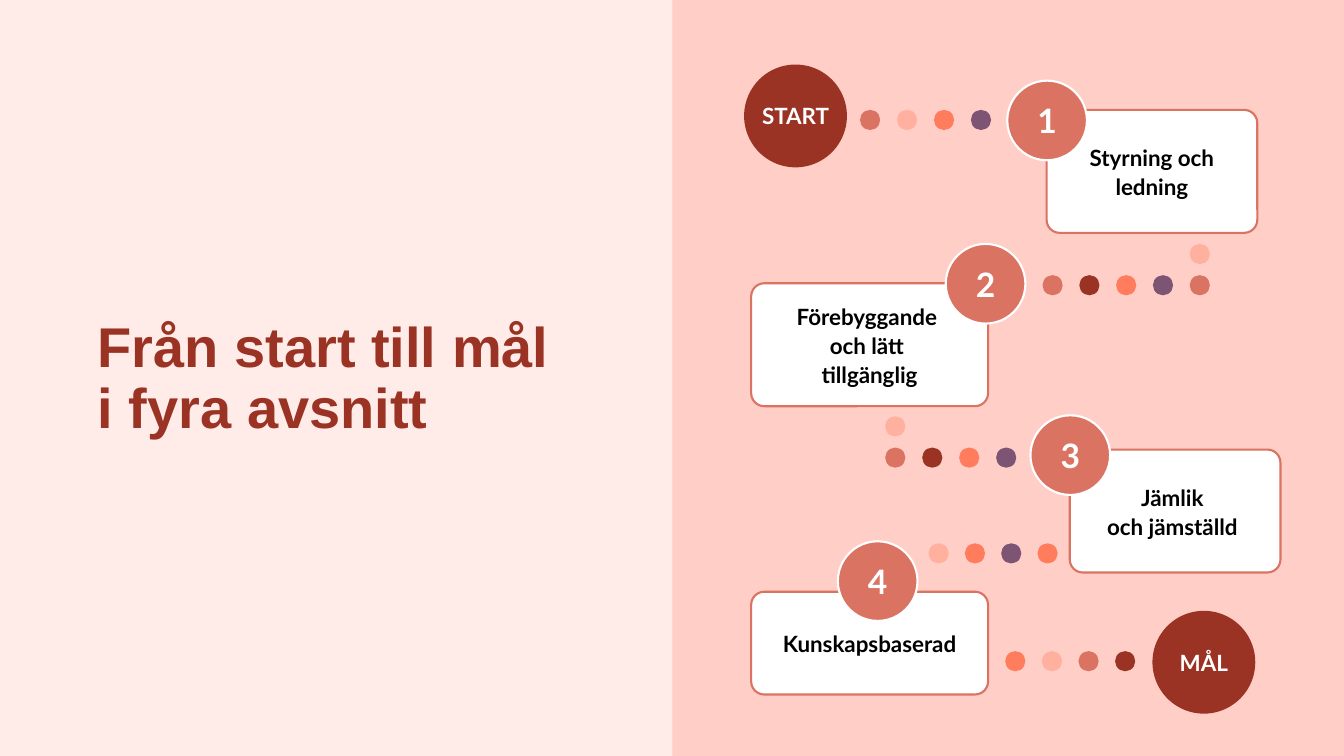
"""Build a slide showing the path from start to goal in four sections."""
from pptx import Presentation
from pptx.dml.color import RGBColor
from pptx.enum.shapes import MSO_SHAPE
from pptx.enum.text import MSO_ANCHOR, MSO_AUTO_SIZE, PP_ALIGN
from pptx.util import Inches, Pt

COLORS = {
    "background": "FFEBE8", "panel": "FFCEC6", "brick": "9A3324", "rose": "DB7363",
    "peach": "FFB09E", "coral": "FF7C5D", "plum": "7E5475", "white": "FFFFFF", "black": "000000",
}
TITLE = "Från start till mål \vi fyra avsnitt"
TITLE_BOX = (0.87, 3.07, 5.32, 1.35)
PANEL_BOX = (6.67, 0, 6.66, 7.5)
DOT, BADGE, ENDPOINT = 0.2, 0.79, 1.02
CORNER = 0.13
TRAILS = [
    (8.53, 9.63, 1.09, ["rose", "peach", "coral", "plum"]),
    (11.8, 11.8, 2.42, ["peach"]),
    (10.34, 11.8, 2.73, ["rose", "brick", "coral", "plum", "rose"]),
    (8.78, 8.78, 4.13, ["peach"]),
    (8.78, 9.88, 4.44, ["rose", "brick", "coral", "plum"]),
    (9.21, 10.29, 5.39, ["peach", "coral", "plum", "coral"]),
    (9.97, 11.06, 6.46, ["coral", "peach", "rose", "brick"]),
]
ENDPOINTS = [("START", 7.38, 0.64), ("MÅL", 11.43, 6.06)]
SECTIONS = [
    ("Styrning och ledning", (10.38, 1.09, 2.09, 1.22), (9.99, 0.8), 1.07),
    ("Förebyggande \voch lätt \vtillgänglig", (7.45, 2.81, 2.35, 1.22), (9.38, 2.42), 1.07),
    ("Jämlik \voch jämställd ", (10.61, 4.46, 2.09, 1.22), (10.22, 4.12), 1.07),
    ("Kunskapsbaserad", (7.45, 5.87, 2.35, 1.02), (8.31, 5.37), 1.0),
]


def rgb(color):
    return RGBColor.from_string(COLORS[color])


def write_text(shape, text, color, size, font_name="Lato", spacing=1.0, **frame_format):
    frame = shape.text_frame
    frame_values = {"word_wrap": True, "auto_size": MSO_AUTO_SIZE.NONE,
                    "vertical_anchor": MSO_ANCHOR.MIDDLE, **frame_format}
    for name, value in frame_values.items():
        setattr(frame, name, value)
    paragraph = frame.paragraphs[0]
    paragraph.text = text
    paragraph.line_spacing = spacing
    paragraph.alignment = PP_ALIGN.CENTER
    for run in paragraph.runs:
        for name, value in {"name": font_name, "size": Pt(size), "bold": True}.items():
            setattr(run.font, name, value)
        run.font.color.rgb = rgb(color)
    return paragraph


def add_shape(slide, kind, box, fill, line=None):
    shape = slide.shapes.add_shape(kind, *map(Inches, box))
    shape.shadow.inherit = False
    shape.fill.solid()
    shape.fill.fore_color.rgb = rgb(fill)
    if line:
        shape.line.color.rgb = rgb(line)
        shape.line.width = Pt(1.5)
    else:
        shape.line.fill.background()
    return shape


def add_circle(slide, left, top, diameter, fill, line=None):
    return add_shape(slide, MSO_SHAPE.OVAL, (left, top, diameter, diameter), fill, line)


def add_title(slide):
    title = slide.shapes.title
    for name, value in zip(("left", "top", "width", "height"), TITLE_BOX):
        setattr(title, name, Inches(value))
    paragraph = write_text(title, TITLE, "brick", 40, "Arial", 0.9,
                           vertical_anchor=MSO_ANCHOR.BOTTOM)
    paragraph.alignment = PP_ALIGN.LEFT


def add_path(slide):
    for first, last, top, colors in TRAILS:
        step = (last - first) / max(len(colors) - 1, 1)
        for index, color in enumerate(colors):
            add_circle(slide, first + index * step, top, DOT, color)
    no_margins = {"margin_left": 0, "margin_right": 0, "margin_top": 0, "margin_bottom": 0}
    for label, left, top in ENDPOINTS:
        circle = add_circle(slide, left, top, ENDPOINT, "brick")
        write_text(circle, label, "white", 16, **no_margins)
    for number, (label, box, badge_position, spacing) in enumerate(SECTIONS, 1):
        card = add_shape(slide, MSO_SHAPE.ROUNDED_RECTANGLE, box, "white", "rose")
        card.adjustments[0] = CORNER / box[3]
        write_text(card, label, "black", 16, spacing=spacing)
        badge = add_circle(slide, *badge_position, BADGE, "rose", "white")
        write_text(badge, str(number), "white", 24, **no_margins)


def main():
    presentation = Presentation()
    presentation.slide_width = Inches(13.33)
    presentation.slide_height = Inches(7.5)
    slide = presentation.slides.add_slide(presentation.slide_layouts[5])
    slide.background.fill.solid()
    slide.background.fill.fore_color.rgb = rgb("background")
    add_shape(slide, MSO_SHAPE.RECTANGLE, PANEL_BOX, "panel")
    add_title(slide)
    add_path(slide)
    presentation.save("out.pptx")


if __name__ == "__main__":
    main()
